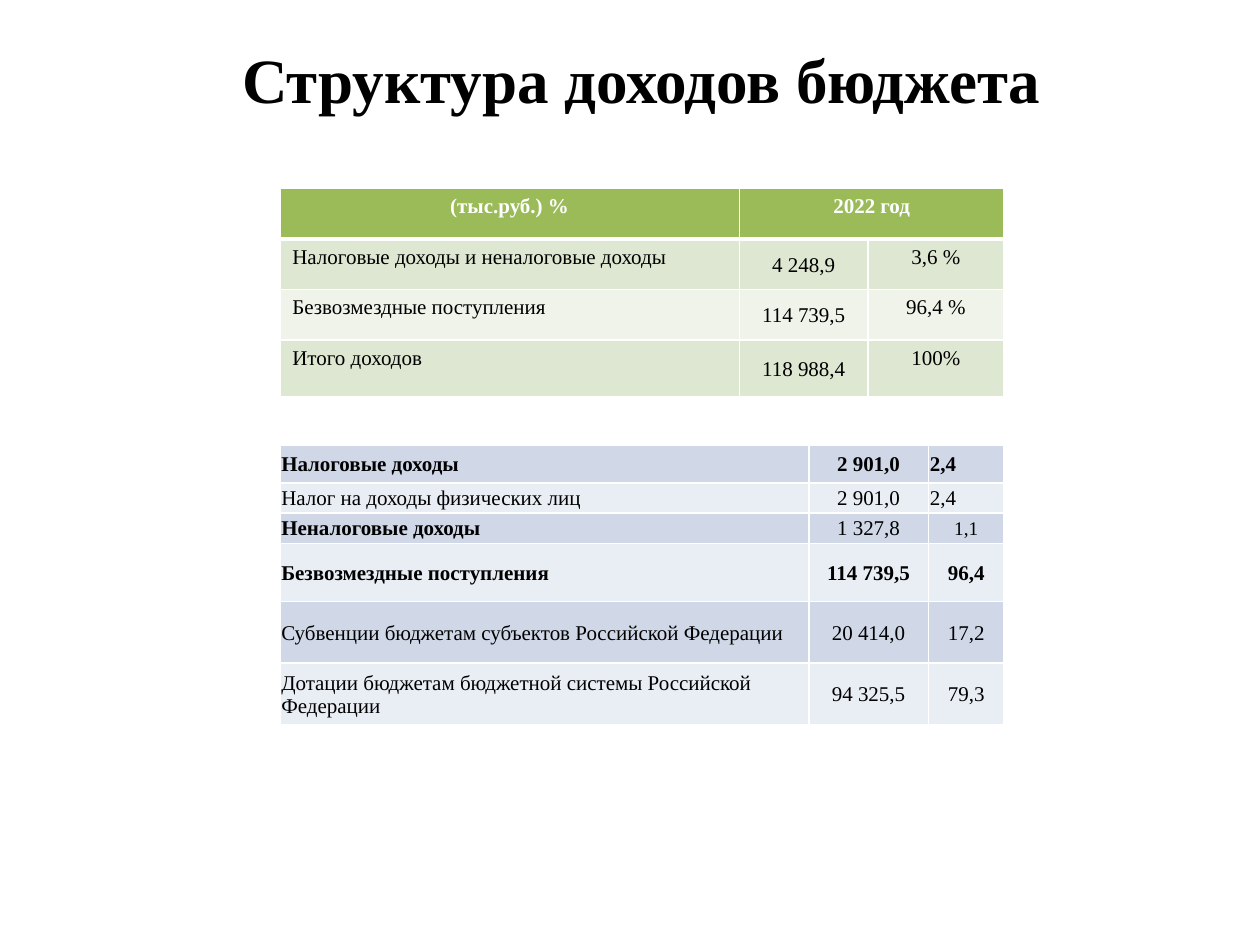
import dataclasses

import pptx
import pptx.dml.color
import pptx.enum.text
import pptx.oxml
import pptx.oxml.ns
import pptx.util
from pptx.util import Cm

LEFT = pptx.enum.text.PP_ALIGN.LEFT
MID = pptx.enum.text.PP_ALIGN.CENTER
ANCHOR = pptx.enum.text.MSO_ANCHOR


@dataclasses.dataclass(frozen=True)
class Theme:
    font: str = "Times New Roman"
    ink: str = "000000"
    white: str = "FFFFFF"
    head: str = "9BBB59"
    green: tuple = ("DEE7D1", "EFF3EA")
    blue: tuple = ("D0D8E8", "E9EDF4")
    title: int = 36
    body: int = 12
    small: int = 11


THEME = Theme()


def rgb(code):
    return pptx.dml.color.RGBColor.from_string(code)


def write(frame, text, size, color, bold, align):
    para = frame.paragraphs[0]
    para.text = text
    para.alignment = align
    font = para.font
    font.name, font.size, font.bold = THEME.font, pptx.util.Pt(size), bold
    font.color.rgb = rgb(color)


def edge(cell, top=1, base=1):
    """Draw white cell borders; top and base are widths in points."""
    props = cell._tc.get_or_add_tcPr()
    for side, width in (("L", 1), ("R", 1), ("T", top), ("B", base)):
        props.append(pptx.oxml.parse_xml(
            f'<a:ln{side} {pptx.oxml.ns.nsdecls("a")} w="{pptx.util.Pt(width)}">'
            f'<a:solidFill><a:srgbClr val="{THEME.white}"/></a:solidFill>'
            f'</a:ln{side}>'))


def paint(cell, color):
    cell.fill.solid()
    cell.fill.fore_color.rgb = rgb(color)


def tighten(cell):
    cell.vertical_anchor = ANCHOR.MIDDLE
    cell.margin_left = cell.margin_right = cell.margin_top = Cm(0.03)
    cell.margin_bottom = 0


def grid(slide, box, cols, rows):
    """Add a plain table whose columns and rows share the box by weight."""
    left, top, width, height = box
    table = slide.shapes.add_table(
        len(rows), len(cols), Cm(left), Cm(top), Cm(width), Cm(height)).table
    table.first_row = table.horz_banding = False
    for col, part in zip(table.columns, cols):
        col.width = Cm(width * part / sum(cols))
    for row, part in zip(table.rows, rows):
        row.height = Cm(height * part / sum(rows))
    return table


def add_title(slide, box):
    frame = slide.shapes.add_textbox(*map(Cm, box)).text_frame
    frame.word_wrap = True
    frame.margin_top = Cm(0.07)
    write(frame, "Структура доходов бюджета", THEME.title, THEME.ink, True, MID)


def add_totals(slide, box):
    data = (
        ("(тыс.руб.) %", "2022 год", ""),
        ("Налоговые доходы и неналоговые доходы", "4 248,9", "3,6 %"),
        ("Безвозмездные поступления", "114 739,5", "96,4 %"),
        ("Итого доходов", "118 988,4", "100%"),
    )
    table = grid(slide, box, (3.65, 1.02, 1.08), (0.4, 0.4, 0.4, 0.45))
    table.cell(0, 1).merge(table.cell(0, 2))
    for i, row in enumerate(data):
        head = i == 0
        for j, text in enumerate(row):
            cell = table.cell(i, j)
            # A thick rule parts the header from the body
            edge(cell, top=3 if i == 1 else 1, base=3 if head else 1)
            paint(cell, THEME.head if head else THEME.green[(i - 1) % 2])
            if j == 1 and not head:
                tighten(cell)
            if text:
                write(cell.text_frame, text, THEME.body,
                      THEME.white if head else THEME.ink, head,
                      MID if head or j else LEFT)


def add_detail(slide, box):
    # Each row: label, sum, share, number of leading bold cells
    data = (
        ("Налоговые доходы", "2 901,0", "2,4", 3),
        ("Налог на доходы физических лиц", "2 901,0", "2,4", 0),
        ("Неналоговые доходы", "1 327,8", "1,1", 1),
        ("Безвозмездные поступления", "114 739,5", "96,4", 3),
        ("Субвенции бюджетам субъектов Российской Федерации",
         "20 414,0", "17,2", 0),
        ("Дотации бюджетам бюджетной системы Российской Федерации",
         "94 325,5", "79,3", 0),
    )
    table = grid(slide, box, (4.2, 0.95, 0.6),
                 (0.3, 0.24, 0.24, 0.46, 0.49, 0.49))
    for i, (*row, bold) in enumerate(data):
        for j, text in enumerate(row):
            cell = table.cell(i, j)
            edge(cell)
            paint(cell, THEME.blue[i % 2])
            tighten(cell)
            flush = j == 0 or (j == 2 and i < 2)
            size = THEME.small if (i, j) == (2, 2) else THEME.body
            write(cell.text_frame, text, size, THEME.ink, j < bold,
                  LEFT if flush else MID)


def main():
    deck = pptx.Presentation()
    deck.slide_width, deck.slide_height = Cm(25.4), Cm(19.05)
    slide = deck.slides.add_slide(deck.slide_layouts[6])
    add_totals(slide, (5.64, 3.8, 14.6, 4.2))
    add_title(slide, (1.5, 0.74, 22.86, 3.18))
    add_detail(slide, (5.64, 8.97, 14.6, 5.65))
    deck.save("out.pptx")


if __name__ == "__main__":
    main()
